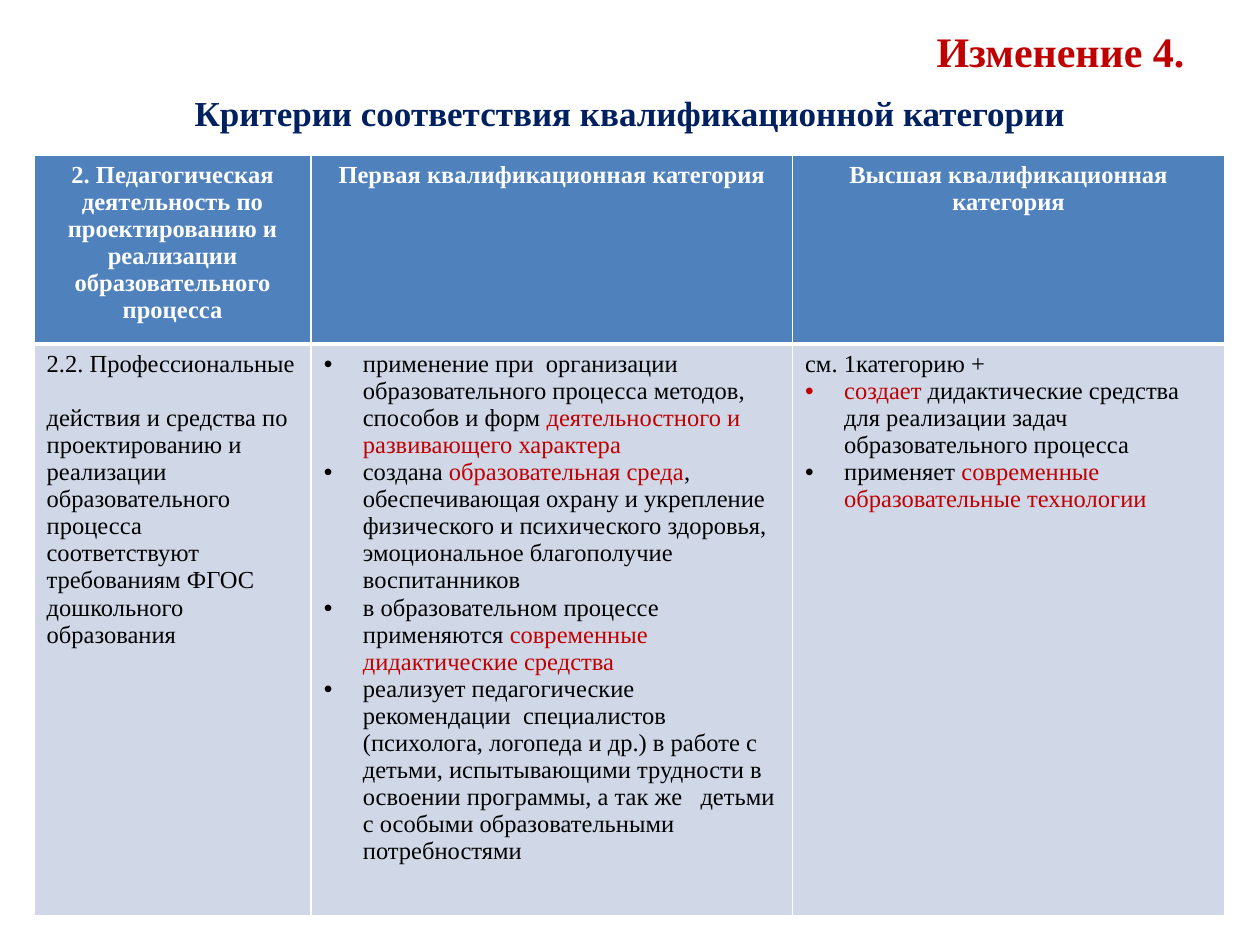
from dataclasses import dataclass

from lxml.etree import SubElement
from pptx import Presentation
from pptx.dml.color import RGBColor
from pptx.enum.text import MSO_ANCHOR, PP_ALIGN
from pptx.oxml import parse_xml
from pptx.oxml.ns import nsdecls, qn
from pptx.util import Inches, Pt

FONT = "Times New Roman"
RED = RGBColor(0xC0, 0x00, 0x00)
NAVY = RGBColor(0x00, 0x20, 0x60)
BLACK = RGBColor(0x00, 0x00, 0x00)
WHITE = RGBColor(0xFF, 0xFF, 0xFF)
HEADER_BLUE = RGBColor(0x4F, 0x81, 0xBD)
BODY_BLUE = RGBColor(0xD0, 0xD8, 0xE8)


@dataclass(frozen=True)
class Span:
    text: str
    color: RGBColor = BLACK
    size: int = 14
    bold: bool = False


@dataclass(frozen=True)
class Para:
    spans: tuple[Span, ...]
    align: PP_ALIGN = PP_ALIGN.LEFT
    bullet: bool = False
    before: float = 0
    after: float = 0


def red(text: str) -> Span:
    return Span(text, RED)


def plain(text: str, after: float = 0) -> Para:
    return Para((Span(text),), after=after)


def bullet(*spans: Span) -> Para:
    return Para(spans, bullet=True)


def heading(text: str) -> Para:
    return Para((Span(text, WHITE, bold=True),), PP_ALIGN.CENTER)


COLUMN_WIDTHS = (2.2, 3.82, 3.43)
ROW_HEIGHTS = (1.38, 4.18)

HEADER_ROW = [
    [heading("2. Педагогическая деятельность по проектированию и реализации "
             "образовательного процесса")],
    [heading("Первая квалификационная категория")],
    [heading("Высшая квалификационная категория")],
]
CRITERIA_ROW = [
    [
        plain("2.2. Профессиональные", after=15.5),
        plain("действия и средства по проектированию и реализации "
              "образовательного процесса"),
        plain("соответствуют требованиям ФГОС дошкольного образования"),
    ],
    [
        bullet(Span("применение при  организации образовательного процесса "
                    "методов, способов и форм "),
               red("деятельностного и развивающего характера")),
        bullet(Span("создана "), red("образовательная среда"),
               Span(", обеспечивающая охрану и укрепление физического и "
                    "психического здоровья, эмоциональное благополучие "
                    "воспитанников")),
        bullet(Span("в образовательном процессе применяются "),
               red("современные дидактические средства")),
        bullet(Span("реализует педагогические рекомендации  специалистов "
                    "(психолога, логопеда и др.) в работе с детьми, "
                    "испытывающими трудности в освоении программы, а так же   "
                    "детьми с особыми образовательными потребностями")),
    ],
    [
        plain("см. 1категорию +"),
        bullet(red("создает"),
               Span(" дидактические средства для реализации задач "
                    "образовательного процесса")),
        bullet(Span("применяет "), red("современные образовательные технологии")),
    ],
]


def write_paragraphs(frame, paras: list[Para]) -> None:
    for index, para in enumerate(paras):
        paragraph = frame.paragraphs[0] if index == 0 else frame.add_paragraph()
        paragraph.alignment = para.align
        paragraph.space_before = Pt(para.before)
        paragraph.space_after = Pt(para.after)
        if para.bullet:
            properties = paragraph._p.get_or_add_pPr()
            properties.set("marL", str(Inches(0.31)))
            properties.set("indent", str(-Inches(0.31)))
            SubElement(properties, qn("a:buFont")).set("typeface", "Arial")
            SubElement(properties, qn("a:buChar")).set("char", "•")
        for span in para.spans:
            run = paragraph.add_run()
            run.text = span.text
            run.font.name = FONT
            run.font.size = Pt(span.size)
            run.font.bold = span.bold
            run.font.color.rgb = span.color


def add_text(page, top: float, height: float, para: Para, anchor: MSO_ANCHOR) -> None:
    box = page.shapes.add_textbox(Inches(0.5), Inches(top), Inches(9), Inches(height))
    box.text_frame.word_wrap = True
    box.text_frame.vertical_anchor = anchor
    write_paragraphs(box.text_frame, [para])


def set_borders(cell, top: float, bottom: float) -> None:
    """Draw white cell borders, 1 pt at the sides; top and bottom are in points."""
    properties = cell._tc.get_or_add_tcPr()
    widths = {"lnL": 1, "lnR": 1, "lnT": top, "lnB": bottom}
    for position, (tag, width) in enumerate(widths.items()):
        properties.insert(position, parse_xml(
            f'<a:{tag} {nsdecls("a")} w="{Pt(width)}"><a:solidFill>'
            f'<a:srgbClr val="{WHITE}"/></a:solidFill></a:{tag}>'))


def add_criteria_table(page) -> None:
    table = page.shapes.add_table(
        len(ROW_HEIGHTS), len(COLUMN_WIDTHS), Inches(0.27), Inches(1.23),
        Inches(sum(COLUMN_WIDTHS)), Inches(sum(ROW_HEIGHTS))).table
    for column, width in zip(table.columns, COLUMN_WIDTHS):
        column.width = Inches(width)
    for row, height in zip(table.rows, ROW_HEIGHTS):
        row.height = Inches(height)
    styles = ((HEADER_ROW, HEADER_BLUE, 1, 3), (CRITERIA_ROW, BODY_BLUE, 3, 1))
    for row, (contents, fill, top, bottom) in zip(table.rows, styles):
        for cell, paras in zip(row.cells, contents):
            cell.fill.solid()
            cell.fill.fore_color.rgb = fill
            set_borders(cell, top, bottom)
            write_paragraphs(cell.text_frame, paras)


def main() -> None:
    deck = Presentation()
    deck.slide_width, deck.slide_height = Inches(10), Inches(7.5)
    page = deck.slides.add_slide(deck.slide_layouts[6])
    title = Span("Изменение 4.", RED, 24, True)
    subtitle = Span("Критерии соответствия квалификационной категории", NAVY, 20, True)
    add_text(page, 0.13, 0.55, Para((title,), PP_ALIGN.RIGHT), MSO_ANCHOR.MIDDLE)
    add_text(page, 0.68, 6.02, Para((subtitle,), PP_ALIGN.CENTER, before=4), MSO_ANCHOR.TOP)
    add_criteria_table(page)
    deck.save("out.pptx")


if __name__ == "__main__":
    main()
